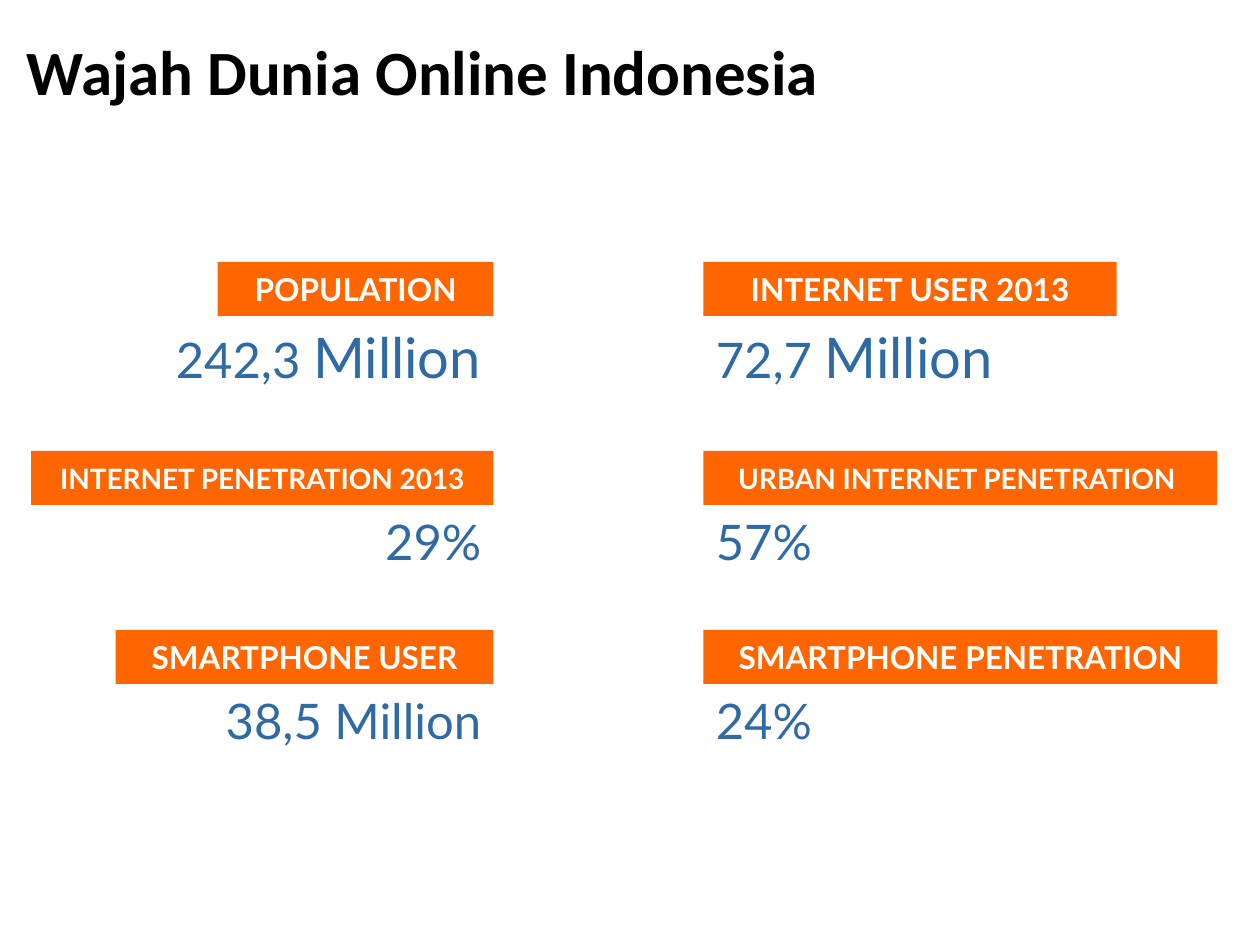
from pptx import Presentation
from pptx.dml.color import RGBColor
from pptx.enum.shapes import MSO_SHAPE
from pptx.enum.text import MSO_ANCHOR, MSO_AUTO_SIZE, PP_ALIGN
from pptx.util import Cm, Pt

RECT = MSO_SHAPE.RECTANGLE
TOP, MIDDLE = MSO_ANCHOR.TOP, MSO_ANCHOR.MIDDLE
LEFT, CENTER, RIGHT = PP_ALIGN.LEFT, PP_ALIGN.CENTER, PP_ALIGN.RIGHT
FIT_SHAPE = MSO_AUTO_SIZE.SHAPE_TO_FIT_TEXT

ORANGE, BLUE, WHITE, BLACK = "FF6600", "2F6AA4", "FFFFFF", "000000"
LEFT_COLUMN_END, RIGHT_COLUMN_START = 9.95, 14.18
BAR_HEIGHT = 1.09

# label, label size, bar width, value runs, value width
ROWS = [
    (5.28, 1.63,
     ("POPULATION", 18, 5.56, [("242,3 ", 28), ("Million", 32)], 6.76),
     ("INTERNET USER 2013", 18, 8.33, [("72,7 ", 28), ("Million", 32)], 6.22)),
    (9.09, 1.45,
     ("INTERNET PENETRATION 2013", 16, 9.32, [("29%", 28)], 2.44),
     ("URBAN INTERNET PENETRATION ", 16, 10.36, [("57%", 28)], 2.44)),
    (12.7, 1.45,
     ("SMARTPHONE USER", 18, 7.62, [("38,5 Million", 28)], 5.77),
     ("SMARTPHONE PENETRATION", 18, 10.36, [("24%", 28)], 2.44)),
]


def rgb(color):
    """Return the colour for a hex string."""
    return RGBColor.from_string(color)


def add_text(p, text, size=18, color=BLACK, font="Lato", bold=False, align=LEFT):
    """Append a formatted run to a paragraph."""
    p.alignment = align
    r = p.add_run()
    r.text = text
    r.font.size = Pt(size)
    r.font.name = font
    r.font.bold = bold
    r.font.color.rgb = rgb(color)


def fit_to_text(tf):
    """Let the frame take the size of its unwrapped text."""
    tf.word_wrap = False
    tf.auto_size = FIT_SHAPE
    tf.vertical_anchor = TOP


def set_title(s, text):
    """Place and format the title placeholder."""
    sp = s.shapes.title
    sp.left, sp.top, sp.width, sp.height = Cm(0.28), Cm(0.53), Cm(16.66), Cm(1.8)
    fit_to_text(sp.text_frame)
    add_text(sp.text_frame.paragraphs[0], text, size=36, font="Calibri", bold=True)


def add_bar(s, x, y, width, label, size):
    """Add an orange bar with a centred label."""
    sp = s.shapes.add_shape(RECT, Cm(x), Cm(y), Cm(width), Cm(BAR_HEIGHT))
    sp.shadow.inherit = False
    sp.fill.solid()
    sp.fill.fore_color.rgb = rgb(ORANGE)
    sp.line.fill.background()
    tf = sp.text_frame
    tf.word_wrap = True
    tf.vertical_anchor = MIDDLE
    add_text(tf.paragraphs[0], label, size=size, color=WHITE, bold=True, align=CENTER)


def add_value(s, x, y, width, height, runs, align):
    """Add the blue figure under a bar."""
    sp = s.shapes.add_textbox(Cm(x), Cm(y), Cm(width), Cm(height))
    fit_to_text(sp.text_frame)
    for text, size in runs:
        add_text(sp.text_frame.paragraphs[0], text, size=size, color=BLUE, align=align)


def add_statistic(s, y, value_height, statistic, align):
    """Add a bar and its figure, flush with the inner edge of the column."""
    label, size, bar_width, runs, value_width = statistic

    def start(width):
        """Return the left edge of an item of this width."""
        return LEFT_COLUMN_END - width if align == RIGHT else RIGHT_COLUMN_START

    add_bar(s, start(bar_width), y, bar_width, label, size)
    add_value(s, start(value_width), y + BAR_HEIGHT, value_width, value_height, runs, align)


def main():
    """Build and save the slide."""
    prs = Presentation()
    prs.slide_width, prs.slide_height = Cm(25.4), Cm(19.05)
    s = prs.slides.add_slide(prs.slide_layouts[5])
    set_title(s, "Wajah Dunia Online Indonesia")
    for y, value_height, left, right in ROWS:
        add_statistic(s, y, value_height, left, RIGHT)
        add_statistic(s, y, value_height, right, LEFT)
    prs.save("out.pptx")


if __name__ == "__main__":
    main()
